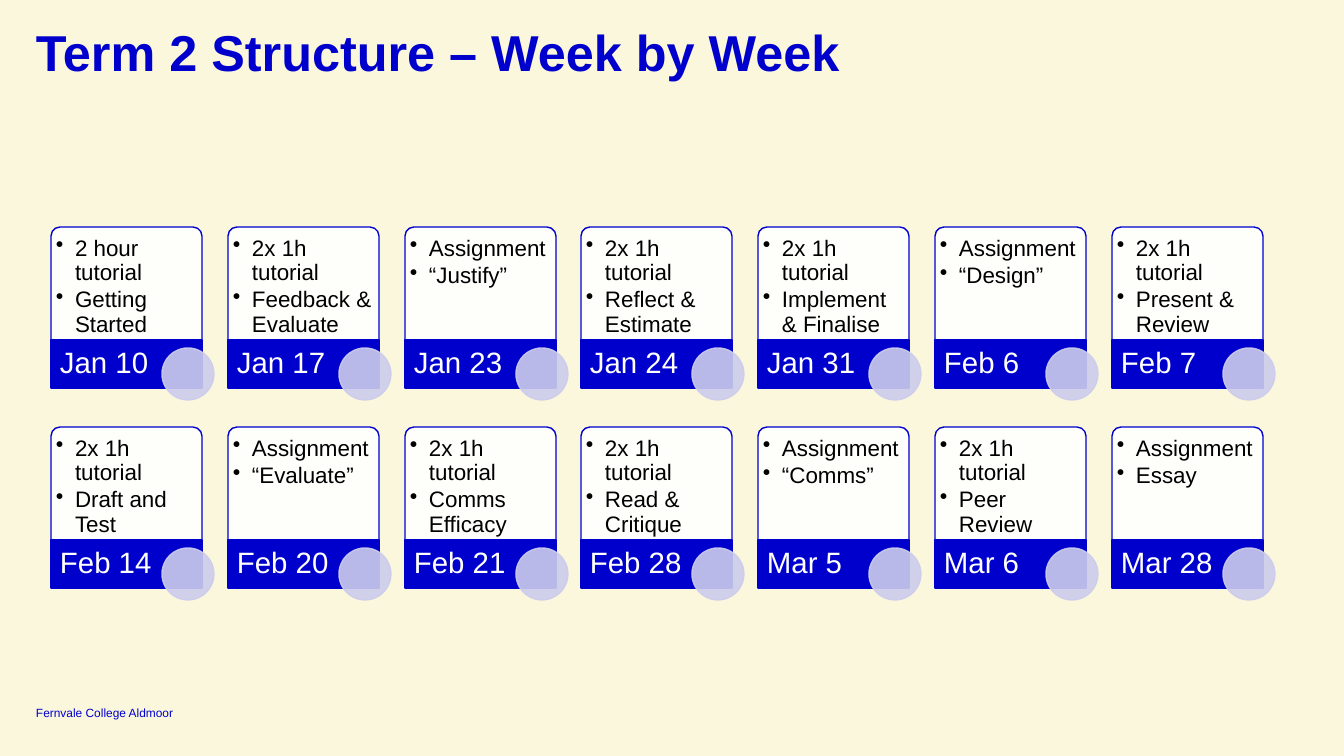
from dataclasses import dataclass

import lxml.etree
import pptx
import pptx.dml.color
import pptx.enum.shapes
import pptx.enum.text
import pptx.oxml.ns
import pptx.util

SHAPE = pptx.enum.shapes.MSO_SHAPE
ANCHOR = pptx.enum.text.MSO_ANCHOR
SLIDE_W, SLIDE_H = 1344, 756
EMU_PER_PX = 914400 / 100.8

COLS = 7
GRID_X, GRID_Y = 51, 227
GRID_SPAN, ROW_PITCH = 1061, 200
CARD_W, CARD_H = 151, 113
BAND_H = 48
DATE_W = 107
DOT_X, DOT_Y, DOT_SIZE = 111, 121, 52
BULLET_INDENT = 19


@dataclass(frozen=True)
class Theme:
    font: str = "Arial"
    paper: str = "FBF7DC"
    blue: str = "0000CD"
    white: str = "FFFFFF"
    black: str = "000000"
    lilac: str = "CCCCED"
    title: float = 36
    date: float = 21
    body: float = 16
    footer: float = 8.5
    line: float = 1
    spacing: float = 0.9
    bullet_gap: float = 2.4
    alpha: int = 90


@dataclass(frozen=True)
class Box:
    x: int
    y: int
    w: int
    h: int

    def emu(self) -> list[int]:
        return [px(v) for v in (self.x, self.y, self.w, self.h)]


@dataclass(frozen=True)
class Style:
    size: float
    color: str
    bold: bool = False
    anchor: ANCHOR = ANCHOR.TOP
    insets: tuple[int, int, int, int] = (0, 0, 0, 0)
    bullets: bool = False


@dataclass(frozen=True)
class Week:
    date: str
    activity: str
    topic: str


THEME = Theme()
TITLE = Style(THEME.title, THEME.blue, bold=True)
FOOTER = Style(THEME.footer, THEME.blue, anchor=ANCHOR.BOTTOM)
DATE = Style(THEME.date, THEME.white, anchor=ANCHOR.MIDDLE, insets=(9, 0, 3, 0))
BODY = Style(THEME.body, THEME.black, insets=(2, 7, 2, 2), bullets=True)

WEEKS = [
    Week("Jan 10", "2 hour tutorial", "Getting Started"),
    Week("Jan 17", "2x 1h tutorial", "Feedback & Evaluate"),
    Week("Jan 23", "Assignment", "“Justify”"),
    Week("Jan 24", "2x 1h tutorial", "Reflect & Estimate"),
    Week("Jan 31", "2x 1h tutorial", "Implement & Finalise"),
    Week("Feb 6", "Assignment", "“Design”"),
    Week("Feb 7", "2x 1h tutorial", "Present & Review"),
    Week("Feb 14", "2x 1h tutorial", "Draft and Test"),
    Week("Feb 20", "Assignment", "“Evaluate”"),
    Week("Feb 21", "2x 1h tutorial", "Comms Efficacy"),
    Week("Feb 28", "2x 1h tutorial", "Read & Critique"),
    Week("Mar 5", "Assignment", "“Comms”"),
    Week("Mar 6", "2x 1h tutorial", "Peer Review"),
    Week("Mar 28", "Assignment", "Essay"),
]


def px(value: int) -> int:
    return round(value * EMU_PER_PX)


def rgb(value: str) -> pptx.dml.color.RGBColor:
    return pptx.dml.color.RGBColor.from_string(value)


def apply(target, values: dict) -> None:
    for name, value in values.items():
        setattr(target, name, value)


def add_bullet(p) -> None:
    pPr = p._p.get_or_add_pPr()
    pPr.set("marL", str(px(BULLET_INDENT)))
    pPr.set("indent", str(-px(BULLET_INDENT)))
    bullet = lxml.etree.SubElement(pPr, pptx.oxml.ns.qn("a:buChar"))
    bullet.set("char", "•")


def add_text(shapes, box: Box, lines: list[str], style: Style) -> None:
    tf = shapes.add_textbox(*box.emu()).text_frame
    left, top, right, bottom = (px(v) for v in style.insets)
    apply(tf, {
        "word_wrap": True, "vertical_anchor": style.anchor,
        "margin_left": left, "margin_top": top,
        "margin_right": right, "margin_bottom": bottom,
    })
    for i, line in enumerate(lines):
        p = tf.add_paragraph() if i else tf.paragraphs[0]
        p.line_spacing = THEME.spacing
        if style.bullets:
            p.level = 1
            p.space_after = pptx.util.Pt(THEME.bullet_gap)
            add_bullet(p)
        r = p.add_run()
        r.text = line
        apply(r.font, {
            "name": THEME.font, "size": pptx.util.Pt(style.size), "bold": style.bold,
        })
        r.font.color.rgb = rgb(style.color)


def set_alpha(fill) -> None:
    for color in fill.iter(pptx.oxml.ns.qn("a:srgbClr")):
        alpha = lxml.etree.SubElement(color, pptx.oxml.ns.qn("a:alpha"))
        alpha.set("val", str(THEME.alpha * 1000))


def add_panel(shapes, kind: SHAPE, box: Box, fill: str, line: str):
    sp = shapes.add_shape(kind, *box.emu())
    sp.shadow.inherit = False
    sp.fill.solid()
    sp.fill.fore_color.rgb = rgb(fill)
    sp.line.color.rgb = rgb(line)
    sp.line.width = pptx.util.Pt(THEME.line)
    return sp


def add_week(shapes, x: int, y: int, week: Week) -> None:
    card = add_panel(shapes, SHAPE.ROUND_2_SAME_RECTANGLE,
                     Box(x, y, CARD_W, CARD_H), THEME.white, THEME.blue)
    card.adjustments[0] = 0.08
    set_alpha(card._element.spPr.find(pptx.oxml.ns.qn("a:solidFill")))
    add_text(shapes, Box(x + 3, y + 3, CARD_W - 5, CARD_H - 3),
             [week.activity, week.topic], BODY)
    band_y = y + CARD_H
    add_panel(shapes, SHAPE.RECTANGLE, Box(x, band_y, CARD_W, BAND_H),
              THEME.blue, THEME.blue)
    add_text(shapes, Box(x, band_y, DATE_W, BAND_H), [week.date], DATE)
    dot = add_panel(shapes, SHAPE.OVAL, Box(x + DOT_X, y + DOT_Y, DOT_SIZE, DOT_SIZE),
                    THEME.lilac, THEME.lilac)
    set_alpha(dot._element.spPr)


def main() -> None:
    prs = pptx.Presentation()
    apply(prs, {"slide_width": px(SLIDE_W), "slide_height": px(SLIDE_H)})
    s = prs.slides.add_slide(prs.slide_layouts[6])
    s.background.fill.solid()
    s.background.fill.fore_color.rgb = rgb(THEME.paper)

    add_text(s.shapes, Box(36, 705, 156, 15), ["Fernvale College Aldmoor"], FOOTER)
    add_text(s.shapes, Box(36, 28, 1272, 41), ["Term 2 Structure – Week by Week"], TITLE)
    timeline = s.shapes.add_group_shape()
    for i, week in enumerate(WEEKS):
        row, col = divmod(i, COLS)
        x = GRID_X + round(col * GRID_SPAN / (COLS - 1))
        add_week(timeline.shapes, x, GRID_Y + row * ROW_PITCH, week)

    prs.save("out.pptx")


if __name__ == "__main__":
    main()
